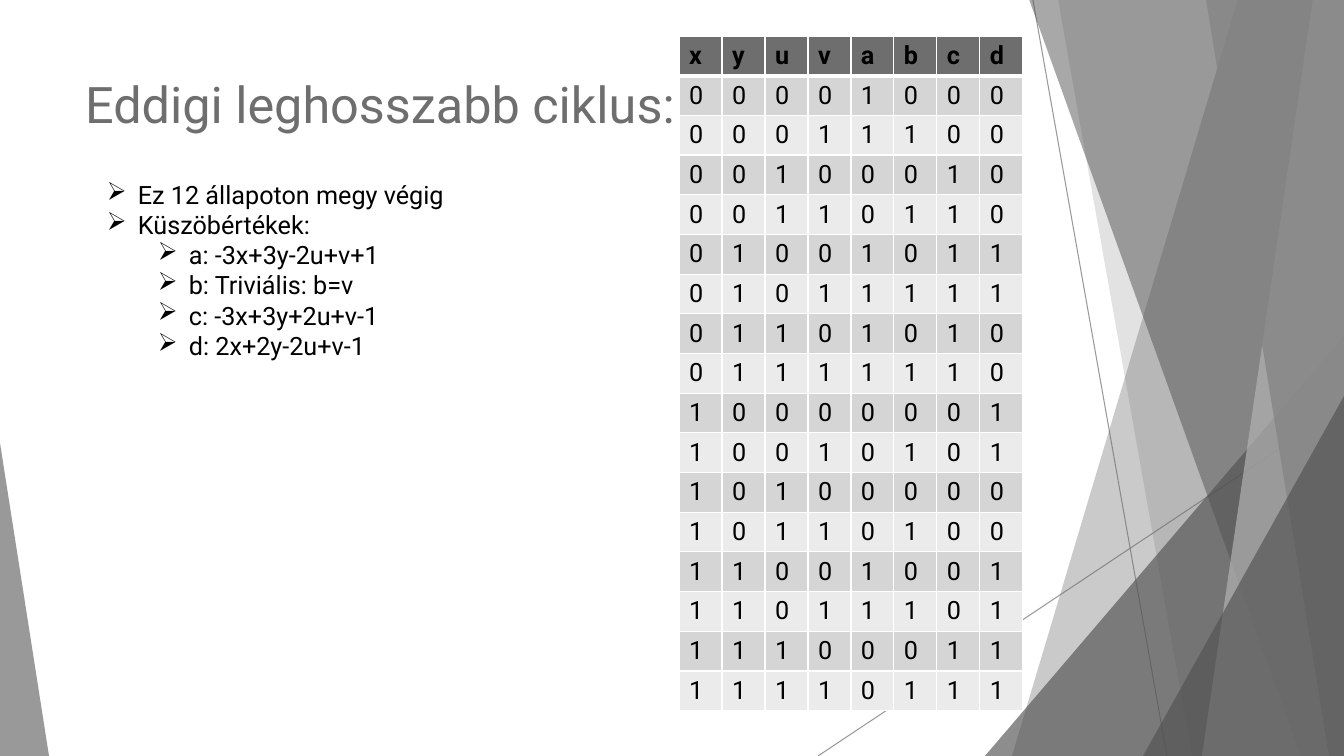
from lxml import etree
from pptx import Presentation
from pptx import util as u
from pptx.dml.color import RGBColor
from pptx.enum import shapes, text
from pptx.oxml import parse_xml
from pptx.oxml.ns import nsdecls, qn

PX = 914400 / 100.8
FONT = "Roboto"
COLORS = {
    "grey": "6E6E6E", "dark": "525252", "mid": "858585", "light": "B2B2B2",
    "odd": "D5D5D5", "even": "EBEBEB", "black": "000000", "white": "FFFFFF",
}


def px(*lengths):
    return [u.Emu(round(length * PX)) for length in lengths]


def paint(part, color, opacity):
    """Flat fill with the given opacity in percent, no outline or shadow."""
    part.shadow.inherit = False
    part.line.fill.background()
    part.fill.solid()
    part.fill.fore_color.rgb = RGBColor.from_string(COLORS[color])
    tint = part.fill._xPr.find(qn("a:solidFill"))[0]
    etree.SubElement(tint, qn("a:alpha"), val=str(opacity * 1000))


prs = Presentation()
prs.slide_width, prs.slide_height = px(1344, 756)
slide = prs.slides.add_slide(prs.slide_layouts[5])

# Thin background lines
for ends in [(1033, 0, 1167, 756), (1344, 406, 818, 756)]:
    ray = slide.shapes.add_connector(shapes.MSO_CONNECTOR.STRAIGHT, *px(*ends))
    ray.line.width = u.Pt(0.75)
    ray.line.color.rgb = RGBColor.from_string(COLORS["grey"])
    tint = ray.line.fill._xPr.find(qn("a:solidFill"))[0]
    etree.SubElement(tint, qn("a:alpha"), val="70000")
    etree.SubElement(ray._element.spPr, qn("a:effectLst"))

# Translucent facets: bands run from a top edge to a bottom edge and the right
# side of the slide; triangles have their apex at one end (0 left, 1 right)
facets = [
    ("band", (1238, 1012), "grey", 36),
    ("band", (1058, 1192), "grey", 20),
    ("triangle", (985, 336, 359, 420, 1), "dark", 66),
    ("band", (1029, 1301), "dark", 50),
    ("band", (1313, 1202), "light", 70),
    ("band", (1206, 1329), "mid", 80),
    ("triangle", (1143, 396, 201, 360, 1), "dark", 66),
    ("triangle", (0, 443, 49, 313, 0), "grey", 70),
]
for kind, place, color, opacity in facets:
    if kind == "band":
        top_x, bottom_x = place
        outline = slide.shapes.build_freeform(top_x, -1, scale=PX)
        outline.add_line_segments([(1344, -1), (1344, 756), (bottom_x, 756)])
        facet = outline.convert_to_shape()
    else:
        *box, apex = place
        facet = slide.shapes.add_shape(
            shapes.MSO_SHAPE.ISOSCELES_TRIANGLE, *px(*box))
        facet.adjustments[0] = apex
    paint(facet, color, opacity)

# Title, in front of the background
title = slide.shapes.title
title._element.getparent().append(title._element)
title.left, title.top, title.width, title.height = px(75, 68, 948, 145)
title.text_frame.text = "Eddigi leghosszabb ciklus:"
title.text_frame.auto_size = text.MSO_AUTO_SIZE.NONE
title.text_frame.vertical_anchor = text.MSO_ANCHOR.TOP
heading = title.text_frame.paragraphs[0]
heading.alignment = text.PP_ALIGN.LEFT
heading.font.name, heading.font.size = FONT, u.Pt(36)
heading.font.color.rgb = RGBColor.from_string(COLORS["grey"])

# State table: xyuv counts up in binary, abcd is the next state
next_states = ("1000 1100 0010 0110 1011 1111 1010 1110 "
               "0001 0101 0000 0100 1001 1101 0011 0111").split()
states = ["xyuvabcd"] + [f"{i:04b}{after}" for i, after in enumerate(next_states)]
frame = slide.shapes.add_table(len(states), 8, *px(679, 36, 344, 685))
table = frame.table
for column in table.columns:
    column.width = px(43)[0]
for r, state in enumerate(states):
    table.rows[r].height = px(28)[0]
    for c, value in enumerate(state):
        cell = table.cell(r, c)
        cell.text = value
        font = cell.text_frame.paragraphs[0].font
        font.name, font.size, font.bold = FONT, u.Pt(18), r == 0
        font.color.rgb = RGBColor.from_string(COLORS["black"])
        for side in "LRTB":
            thick = (r, side) in [(0, "B"), (1, "T")]
            cell._tc.get_or_add_tcPr().append(parse_xml(
                f'<a:ln{side} {nsdecls("a")} w="{u.Pt(3 if thick else 1)}">'
                f'<a:solidFill><a:srgbClr val="{COLORS["white"]}"/></a:solidFill>'
                f'</a:ln{side}>'))
        shade = "grey" if r == 0 else "odd" if r % 2 else "even"
        cell.fill.solid()
        cell.fill.fore_color.rgb = RGBColor.from_string(COLORS[shade])
frame.height = px(685)[0]

# Threshold list
thresholds = [
    (0, "Ez 12 állapoton megy végig"),
    (0, "Küszöbértékek:"),
    (1, "a: -3x+3y-2u+v+1"),
    (1, "b: Triviális: b=v"),
    (1, "c: -3x+3y+2u+v-1"),
    (1, "d: 2x+2y-2u+v-1"),
]
notes = slide.shapes.add_textbox(*px(97, 174, 496, 224)).text_frame
notes.word_wrap = True
for i, (level, line) in enumerate(thresholds):
    item = notes.paragraphs[0] if i == 0 else notes.add_paragraph()
    item.text, item.level = line, level
    item.font.name, item.font.size = FONT, u.Pt(18)
    item.font.color.rgb = RGBColor.from_string(COLORS["black"])
    indent, hang = px(31 + 51 * level, -31)
    props = item._p.get_or_add_pPr()
    props.set("marL", str(indent))
    props.set("indent", str(hang))
    props.insert(0, parse_xml(f'<a:buChar {nsdecls("a")} char="➢"/>'))

prs.save("out.pptx")
